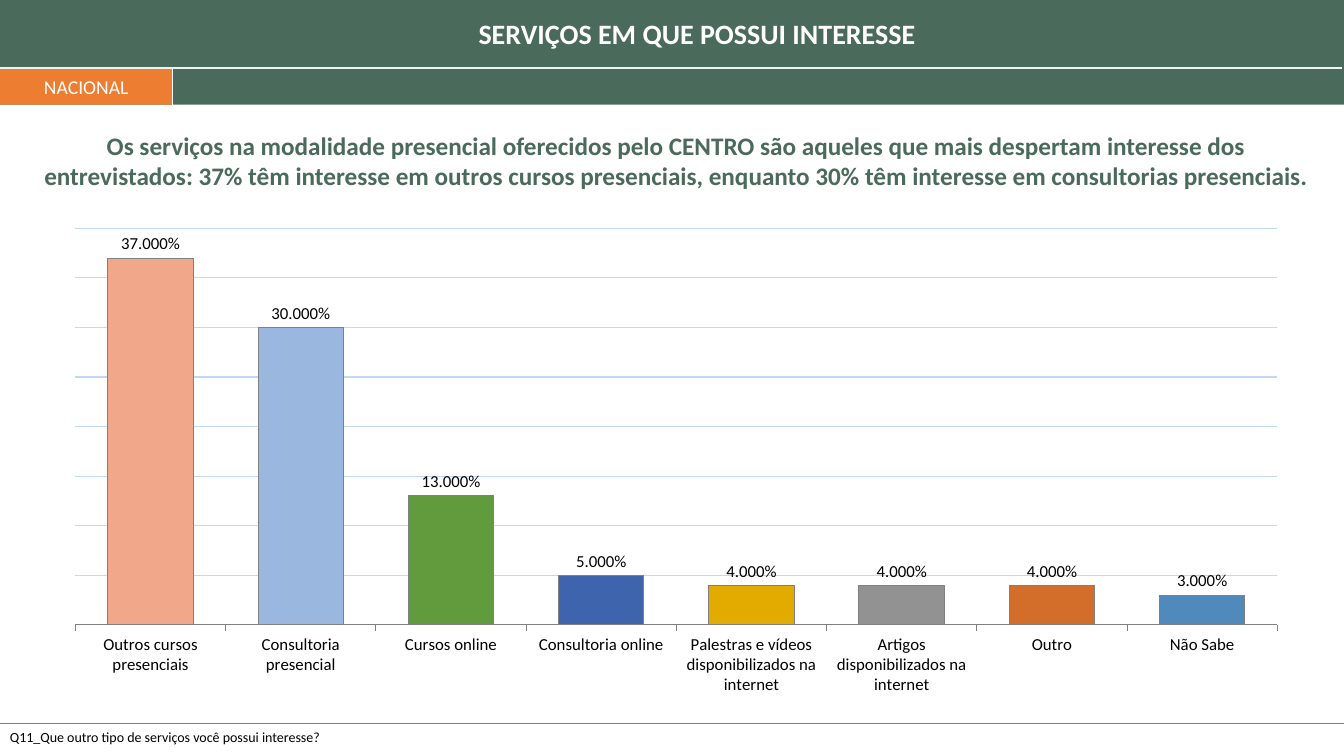
from lxml import etree
from pptx import Presentation
from pptx.chart.data import CategoryChartData
from pptx.dml.color import RGBColor
from pptx.enum.chart import XL_CHART_TYPE, XL_LABEL_POSITION, XL_TICK_MARK
from pptx.enum.shapes import MSO_CONNECTOR, MSO_SHAPE
from pptx.enum.text import MSO_ANCHOR, PP_ALIGN
from pptx.oxml.ns import qn
from pptx.util import Cm, Pt

COLUMN = XL_CHART_TYPE.COLUMN_CLUSTERED
OUT_END = XL_LABEL_POSITION.OUTSIDE_END
TICK_OUT = XL_TICK_MARK.OUTSIDE
STRAIGHT = MSO_CONNECTOR.STRAIGHT
RECT = MSO_SHAPE.RECTANGLE
MIDDLE = MSO_ANCHOR.MIDDLE
LEFT, CENTER = PP_ALIGN.LEFT, PP_ALIGN.CENTER

# Content
TITLE = "SERVIÇOS EM QUE POSSUI INTERESSE"
SCOPE = "NACIONAL"
FINDING = (
    "Os serviços na modalidade presencial oferecidos pelo CENTRO são aqueles "
    "que mais despertam interesse dos entrevistados: 37% têm interesse em "
    "outros cursos presenciais, enquanto 30% têm interesse em consultorias "
    "presenciais."
)
QUERY = "Q11_Que outro tipo de serviços você possui interesse?"
BARS = [  # service, share, colour; the axis runs from right to left
    ("Não Sabe", 0.03, "5089BC"),
    ("Outro", 0.04, "D36E2A"),
    ("Artigos disponibilizados na internet", 0.04, "929292"),
    ("Palestras e vídeos disponibilizados na internet", 0.04, "E3AA00"),
    ("Consultoria online", 0.05, "3D64AC"),
    ("Cursos online", 0.13, "629A3E"),
    ("Consultoria presencial", 0.3, "9AB7DF"),
    ("Outros cursos presenciais", 0.37, "F1A78A"),
]

THEME = {
    "font": "Calibri",
    "green": "4A6A5C", "orange": "ED7D31", "white": "FFFFFF",
    "pale": "F2F2F2", "black": "000000", "gray": "808080", "grid": "C2D8F8",
    "title": 20, "finding": 18, "scope": 14, "chart": 12, "query": 10,
}

# Layout in centimetres
WIDE, HIGH = 33.87, 19.05
HEAD = 2.64          # height of the header band
SPLIT = 1.71         # where the title row ends
TAG = 4.35           # right edge of the scope tag
FOOT = 18.24         # top of the footer

deck = Presentation()
deck.slide_width, deck.slide_height = Cm(WIDE), Cm(HIGH)
slide = deck.slides.add_slide(deck.slide_layouts[6])


def color(name):
    return RGBColor.from_string(THEME.get(name, name))


def style(font, size, ink):
    font.name = THEME["font"]
    font.size = Pt(THEME[size])
    font.color.rgb = color(ink)


def stroke(line, ink, width):
    line.color.rgb = color(ink)
    line.width = Pt(width)


def write(shape, text, size, ink, align=CENTER, bold=False, level=0):
    frame = shape.text_frame
    frame.word_wrap = True
    frame.text = text
    para = frame.paragraphs[0]
    para.alignment, para.level = align, level
    for run in para.runs:
        style(run.font, size, ink)
        run.font.bold = bold


def add_text(box, *args, **opts):
    write(slide.shapes.add_textbox(*map(Cm, box)), *args, **opts)


def add_block(box, ink):
    block = slide.shapes.add_shape(RECT, *map(Cm, box))
    block.shadow.inherit = False
    block.fill.solid()
    block.fill.fore_color.rgb = color(ink)
    block.line.fill.background()
    return block


def add_line(ends, ink, width):
    line = slide.shapes.add_connector(STRAIGHT, *map(Cm, ends))
    stroke(line.line, ink, width)
    etree.SubElement(line._element.spPr, qn("a:effectLst"))


# Footer
add_line((0, FOOT, WIDE, FOOT), "gray", 0.5)
add_text((0, FOOT, WIDE, 0.68), QUERY, "query", "black", align=LEFT)

# Header
add_block((0, 0, WIDE, HEAD), "green")
add_text((0, 0.3, WIDE, 1.11), TITLE, "title", "white", bold=True, level=1)
tag = add_block((0, SPLIT, TAG, HEAD - SPLIT), "orange")
tag.text_frame.vertical_anchor = MIDDLE
write(tag, SCOPE, "scope", "white")
add_line((TAG, HEAD, TAG, SPLIT), "white", 0.5)
add_line((0, SPLIT, WIDE - 0.05, SPLIT), "pale", 1)

# Chart
data = CategoryChartData()
data.categories = [name for name, share, ink in BARS]
data.add_series("Series 1", [share for name, share, ink in BARS])
box = map(Cm, (1.27, 5.51, 31.55, 12.24))
chart = slide.shapes.add_chart(COLUMN, *box, data).chart
chart.has_legend = chart.has_title = False
style(chart.font, "chart", "black")

axis = chart.category_axis
axis.reverse_order = True
axis.major_tick_mark = TICK_OUT
style(axis.tick_labels.font, "chart", "black")
stroke(axis.format.line, "gray", 0.75)

scale = chart.value_axis
scale.minimum_scale, scale.maximum_scale, scale.major_unit = 0, 0.4, 0.05
scale.visible = False
stroke(scale.major_gridlines.format.line, "grid", 0.75)

plot = chart.plots[0]
plot.gap_width = 76
plot.vary_by_categories = False
plot.has_data_labels = True
labels = plot.data_labels
labels.show_value = True
labels.number_format = "0.000%"
labels.number_format_is_linked = False
labels.position = OUT_END
style(labels.font, "chart", "black")

for spot, (name, share, ink) in enumerate(BARS):
    bar = plot.series[0].points[spot].format
    bar.fill.solid()
    bar.fill.fore_color.rgb = color(ink)
    stroke(bar.line, "gray", 0.75)

# Main finding
add_text((0.79, 3.15, 32.51, 1.8), FINDING, "finding", "green", bold=True)

deck.save("out.pptx")
